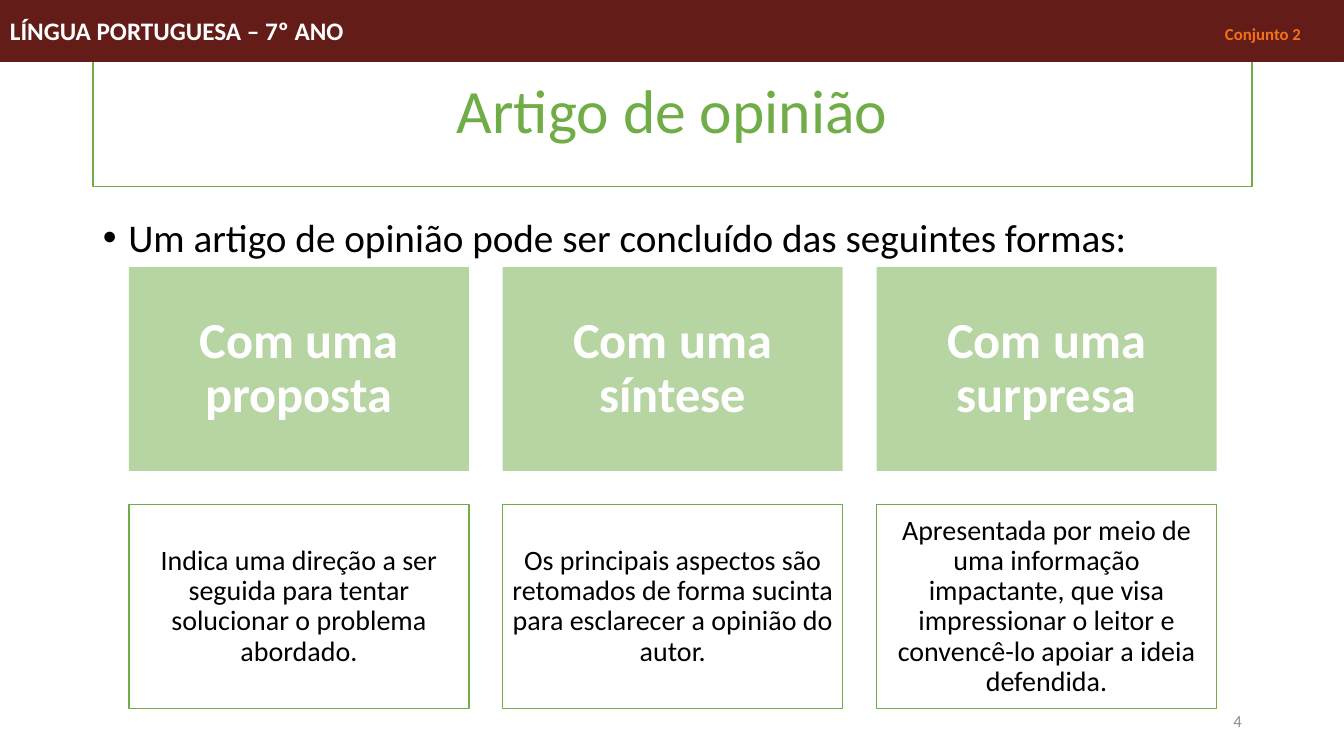
from dataclasses import dataclass

from lxml.etree import SubElement
from pptx import Presentation
from pptx.dml.color import RGBColor
from pptx.enum.shapes import MSO_SHAPE
from pptx.enum.text import MSO_ANCHOR, MSO_AUTO_SIZE, PP_ALIGN
from pptx.oxml.ns import qn
from pptx.util import Cm, Pt

COLOURS = {
    "green": "70AD47",
    "maroon": "631C18",
    "orange": "F47116",
    "grey": "8C8C8C",
    "white": "FFFFFF",
    "black": "000000",
}
FONT = "Calibri"
PAGE_WIDTH = 33.87

# Card grid, in centimetres
CARD_LEFT, CARD_TOP = 3.25, 6.73
CARD_WIDTH, CARD_HEIGHT = 8.57, 5.14
CARD_GAP = 0.85


@dataclass
class Conclusion:
    heading: str
    description: str


@dataclass
class CardStyle:
    fill: str
    text: str
    size: int
    margin: float
    bold: bool = False
    opacity: int = 100
    line: str | None = None


CONCLUSIONS = [
    Conclusion("Com uma proposta",
               "Indica uma direção a ser seguida para tentar solucionar o problema abordado."),
    Conclusion("Com uma síntese",
               "Os principais aspectos são retomados de forma sucinta para esclarecer a "
               "opinião do autor."),
    Conclusion("Com uma surpresa",
               "Apresentada por meio de uma informação impactante, que visa impressionar o "
               "leitor e convencê-lo apoiar a ideia defendida."),
]
HEADING_STYLE = CardStyle("green", "white", 36, 0.38, bold=True, opacity=50)
DESCRIPTION_STYLE = CardStyle("white", "black", 20, 0.2, line="green")


def colour(name: str) -> RGBColor:
    return RGBColor.from_string(COLOURS[name])


def place(shape, left: float, top: float, width: float, height: float) -> None:
    shape.left, shape.top = Cm(left), Cm(top)
    shape.width, shape.height = Cm(width), Cm(height)


def paint(shape, fill: str, line: str | None, width: float = 1) -> None:
    shape.fill.solid()
    shape.fill.fore_color.rgb = colour(fill)
    if line:
        shape.line.color.rgb = colour(line)
        shape.line.width = Pt(width)
    else:
        shape.line.fill.background()


def format_text(shape, size: int, text_colour: str, align, anchor=MSO_ANCHOR.MIDDLE,
                bold: bool = False, spacing: float = 0.9):
    frame = shape.text_frame
    frame.word_wrap = True
    frame.auto_size = MSO_AUTO_SIZE.NONE
    frame.vertical_anchor = anchor
    paragraph = frame.paragraphs[0]
    paragraph.alignment = align
    paragraph.line_spacing = spacing
    font = paragraph.font
    font.name, font.size, font.bold = FONT, Pt(size), bold
    font.color.rgb = colour(text_colour)
    return paragraph


def add_rectangle(page, left: float, top: float, width: float, height: float):
    box = page.shapes.add_shape(MSO_SHAPE.RECTANGLE, Cm(left), Cm(top), Cm(width), Cm(height))
    box.shadow.inherit = False
    return box


def add_card(page, column: int, row: int, text: str, style: CardStyle) -> None:
    box = add_rectangle(page, CARD_LEFT + column * (CARD_WIDTH + CARD_GAP),
                        CARD_TOP + row * (CARD_HEIGHT + CARD_GAP), CARD_WIDTH, CARD_HEIGHT)
    paint(box, style.fill, style.line)
    if style.opacity < 100:
        fill_colour = box.fill._xPr.find(qn("a:solidFill"))[0]
        SubElement(fill_colour, qn("a:alpha"), val=str(style.opacity * 1000))
    frame = box.text_frame
    frame.text = text
    frame.margin_left = frame.margin_right = Cm(style.margin)
    frame.margin_top = frame.margin_bottom = Cm(style.margin)
    format_text(box, style.size, style.text, PP_ALIGN.CENTER, bold=style.bold)


def add_title(page) -> None:
    title = page.shapes.title
    place(title, 2.34, 1.02, 29.21, 3.68)
    paint(title, "white", "green")
    title.text_frame.text = "Artigo de opinião"
    format_text(title, 44, "green", PP_ALIGN.CENTER)


def add_introduction(page) -> None:
    body = page.placeholders[1]
    place(body, 2.34, 5.38, 29.11, 1.7)
    body.text_frame.text = "Um artigo de opinião pode ser concluído das seguintes formas:"
    properties = body.text_frame.paragraphs[0]._p.get_or_add_pPr()
    properties.set("marL", str(Cm(0.64)))
    properties.set("indent", str(Cm(-0.64)))
    SubElement(properties, qn("a:buFont"), typeface="Arial")
    SubElement(properties, qn("a:buChar"), char="•")
    paragraph = format_text(body, 28, "black", PP_ALIGN.LEFT, MSO_ANCHOR.TOP)
    paragraph.space_before = Pt(10)


def add_page_number(page) -> None:
    box = page.shapes.add_textbox(Cm(23.93), Cm(17.65), Cm(7.62), Cm(1.02))
    box.text_frame.text = "4"
    format_text(box, 12, "grey", PP_ALIGN.RIGHT, spacing=1.0)


def add_header(page) -> None:
    band = add_rectangle(page, 0, 0, PAGE_WIDTH, 1.55)
    paint(band, "maroon", "maroon", 0.75)
    paragraph = band.text_frame.paragraphs[0]
    # A right tab stop holds the set name at the far end
    tabs = SubElement(paragraph._p.get_or_add_pPr(), qn("a:tabLst"))
    SubElement(tabs, qn("a:tab"), pos=str(Cm(32.54)), algn="r")
    paragraph.add_run().text = "LÍNGUA PORTUGUESA – 7º ANO\t"
    set_name = paragraph.add_run()
    set_name.text = "Conjunto 2"
    set_name.font.size = Pt(12)
    set_name.font.color.rgb = colour("orange")
    format_text(band, 18, "white", PP_ALIGN.LEFT, bold=True, spacing=1.0)


def main() -> None:
    deck = Presentation()
    deck.slide_width, deck.slide_height = Cm(PAGE_WIDTH), Cm(19.05)
    page = deck.slides.add_slide(deck.slide_layouts[1])

    # Title and introduction
    add_title(page)
    add_introduction(page)

    # Ways to conclude: headings above, descriptions below
    for column, conclusion in enumerate(CONCLUSIONS):
        add_card(page, column, 0, conclusion.heading, HEADING_STYLE)
        add_card(page, column, 1, conclusion.description, DESCRIPTION_STYLE)

    # Page number, then the header band over the title frame
    add_page_number(page)
    add_header(page)
    deck.save("out.pptx")


if __name__ == "__main__":
    main()
